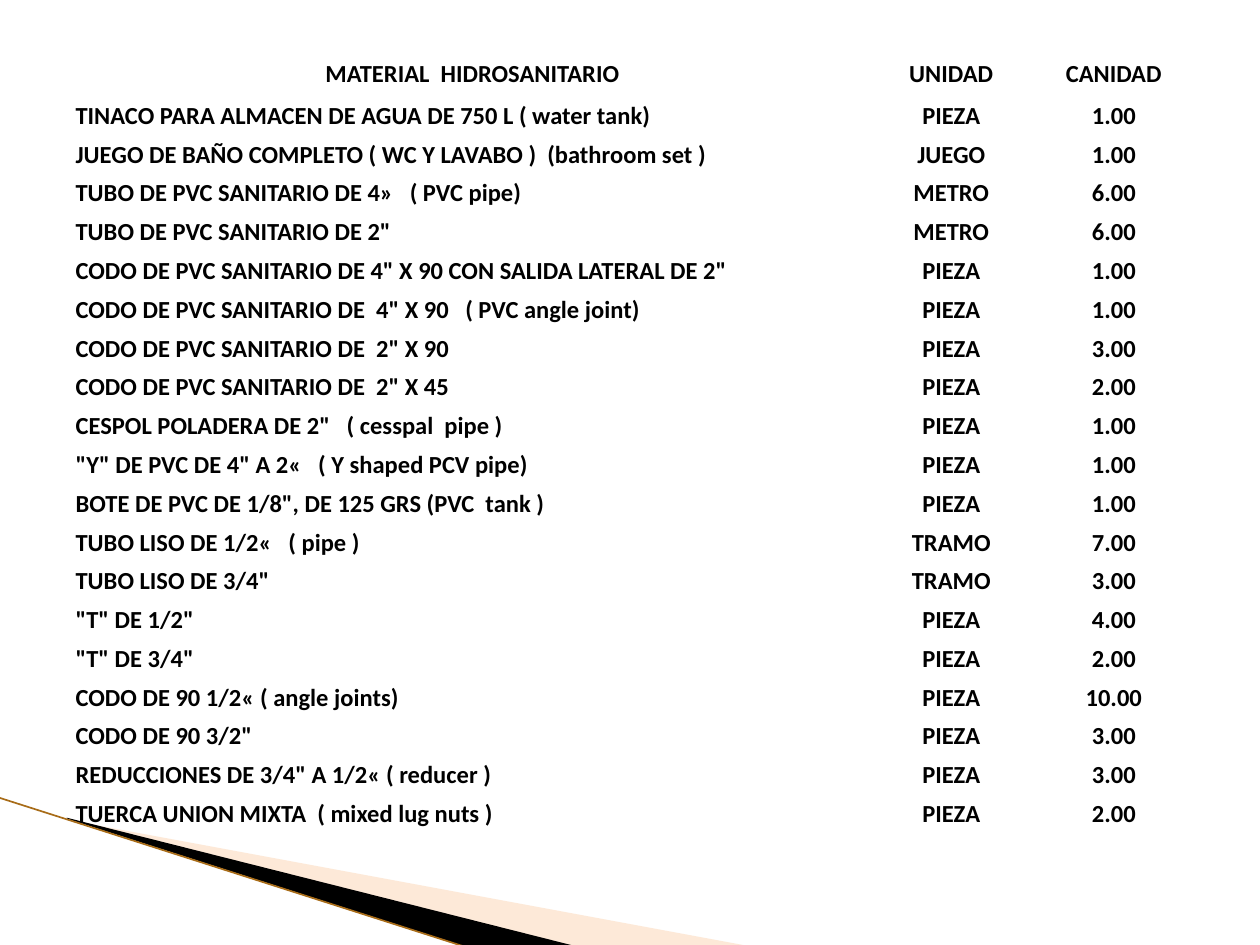
from lxml import etree
from pptx import Presentation
from pptx import util as u
from pptx.dml.color import RGBColor
from pptx.enum import shapes, text
from pptx.oxml.ns import qn

BLACK = RGBColor(0x00, 0x00, 0x00)
PEACH = RGBColor(0xFB, 0xC9, 0x9E)
BRONZE = RGBColor(0xA8, 0x6C, 0x18)
NO_GRID_STYLE = "{2D5ABB26-0587-4C30-8999-92F81FD0307C}"

WIDTH, HEIGHT = u.Inches(10), u.Inches(7.5)

HEADINGS = ("MATERIAL  HIDROSANITARIO", "UNIDAD", "CANIDAD")
MATERIALS = [
    ("TINACO PARA ALMACEN DE AGUA DE 750 L ( water tank)", "PIEZA", 1),
    ("JUEGO DE BAÑO COMPLETO ( WC Y LAVABO )  (bathroom set )", "JUEGO", 1),
    ("TUBO DE PVC SANITARIO DE 4»   ( PVC pipe)", "METRO", 6),
    ('TUBO DE PVC SANITARIO DE 2"', "METRO", 6),
    ('CODO DE PVC SANITARIO DE 4" X 90 CON SALIDA LATERAL DE 2"', "PIEZA", 1),
    ('CODO DE PVC SANITARIO DE  4" X 90   ( PVC angle joint)', "PIEZA", 1),
    ('CODO DE PVC SANITARIO DE  2" X 90', "PIEZA", 3),
    ('CODO DE PVC SANITARIO DE  2" X 45', "PIEZA", 2),
    ('CESPOL POLADERA DE 2"   ( cesspal  pipe )', "PIEZA", 1),
    ('"Y" DE PVC DE 4" A 2«   ( Y shaped PCV pipe)', "PIEZA", 1),
    ('BOTE DE PVC DE 1/8", DE 125 GRS (PVC  tank )', "PIEZA", 1),
    ("TUBO LISO DE 1/2«   ( pipe )", "TRAMO", 7),
    ('TUBO LISO DE 3/4"', "TRAMO", 3),
    ('"T" DE 1/2"', "PIEZA", 4),
    ('"T" DE 3/4"', "PIEZA", 2),
    ("CODO DE 90 1/2« ( angle joints)", "PIEZA", 10),
    ('CODO DE 90 3/2"', "PIEZA", 3),
    ('REDUCCIONES DE 3/4" A 1/2« ( reducer )', "PIEZA", 3),
    ("TUERCA UNION MIXTA  ( mixed lug nuts )", "PIEZA", 2),
]


def across(percent):
    return u.Emu(round(WIDTH * percent / 100))


def down(percent):
    return u.Emu(round(HEIGHT * percent / 100))


def add_wedge(page, corners, colour, opacity=100):
    """Filled outline through corners given in percent of the slide."""
    points = [(across(x), down(y)) for x, y in corners]
    builder = page.shapes.build_freeform(*points[0])
    builder.add_line_segments(points[1:], close=True)
    wedge = builder.convert_to_shape()
    wedge.shadow.inherit = False
    wedge.line.fill.background()
    wedge.fill.solid()
    wedge.fill.fore_color.rgb = colour
    if opacity < 100:
        tint = wedge.fill._xPr.find(qn("a:solidFill"))[0]
        etree.SubElement(tint, qn("a:alpha"), val=str(opacity * 1000))


def add_corner_decoration(page):
    add_wedge(page, [(5.5, 86.8), (59.5, 100.13), (45.6, 100.13), (5.5, 86.67)], PEACH, 40)
    add_wedge(page, [(5.3, 86.53), (45.7, 100.13), (37.2, 100.27), (5.4, 86.67)], BLACK)
    edge = page.shapes.add_connector(
        shapes.MSO_CONNECTOR.STRAIGHT,
        across(-0.1), down(84.4), across(37.1), down(100.27))
    edge.line.color.rgb = BRONZE
    edge.line.width = u.Pt(0.95)
    etree.SubElement(edge._element.spPr, qn("a:effectLst"))


def write_cell(cell, words, anchor, align):
    cell.fill.background()
    cell.vertical_anchor = anchor
    cell.margin_left = cell.margin_right = cell.margin_top = u.Inches(0.01)
    cell.margin_bottom = 0
    para = cell.text_frame.paragraphs[0]
    para.alignment = align
    span = para.add_run()
    span.text = words
    span.font.name = "Calibri"
    span.font.size = u.Pt(14)
    span.font.bold = True
    span.font.color.rgb = BLACK


def add_materials_table(page, left, top, columns, header_height, row_height):
    """Table of materials; all lengths in percent of the slide."""
    height = header_height + row_height * len(MATERIALS)
    frame = page.shapes.add_table(
        len(MATERIALS) + 1, len(columns),
        across(left), down(top), across(sum(columns)), down(height))
    table = frame.table
    table._tbl.tblPr.find(qn("a:tableStyleId")).text = NO_GRID_STYLE
    table.first_row = table.horz_banding = False
    for column, width in zip(table.columns, columns):
        column.width = across(width)
    for index, row in enumerate(table.rows):
        row.height = down(row_height if index else header_height)

    # Headings
    centre, start = text.PP_ALIGN.CENTER, text.PP_ALIGN.LEFT
    for column, heading in enumerate(HEADINGS):
        write_cell(table.cell(0, column), heading, text.MSO_ANCHOR.MIDDLE, centre)

    # Materials with unit and quantity
    for row, (name, unit, quantity) in enumerate(MATERIALS, 1):
        for column, words in enumerate((name, unit, f"{quantity:.2f}")):
            write_cell(table.cell(row, column), words, text.MSO_ANCHOR.BOTTOM,
                       centre if column else start)


def main():
    deck = Presentation()
    deck.slide_width, deck.slide_height = WIDTH, HEIGHT
    page = deck.slides.add_slide(deck.slide_layouts[6])
    add_corner_decoration(page)
    add_materials_table(page, left=5.9, top=5.87, columns=(63.2, 12.8, 13),
                        header_height=3.87, row_height=4.11)
    deck.save("out.pptx")


if __name__ == "__main__":
    main()
